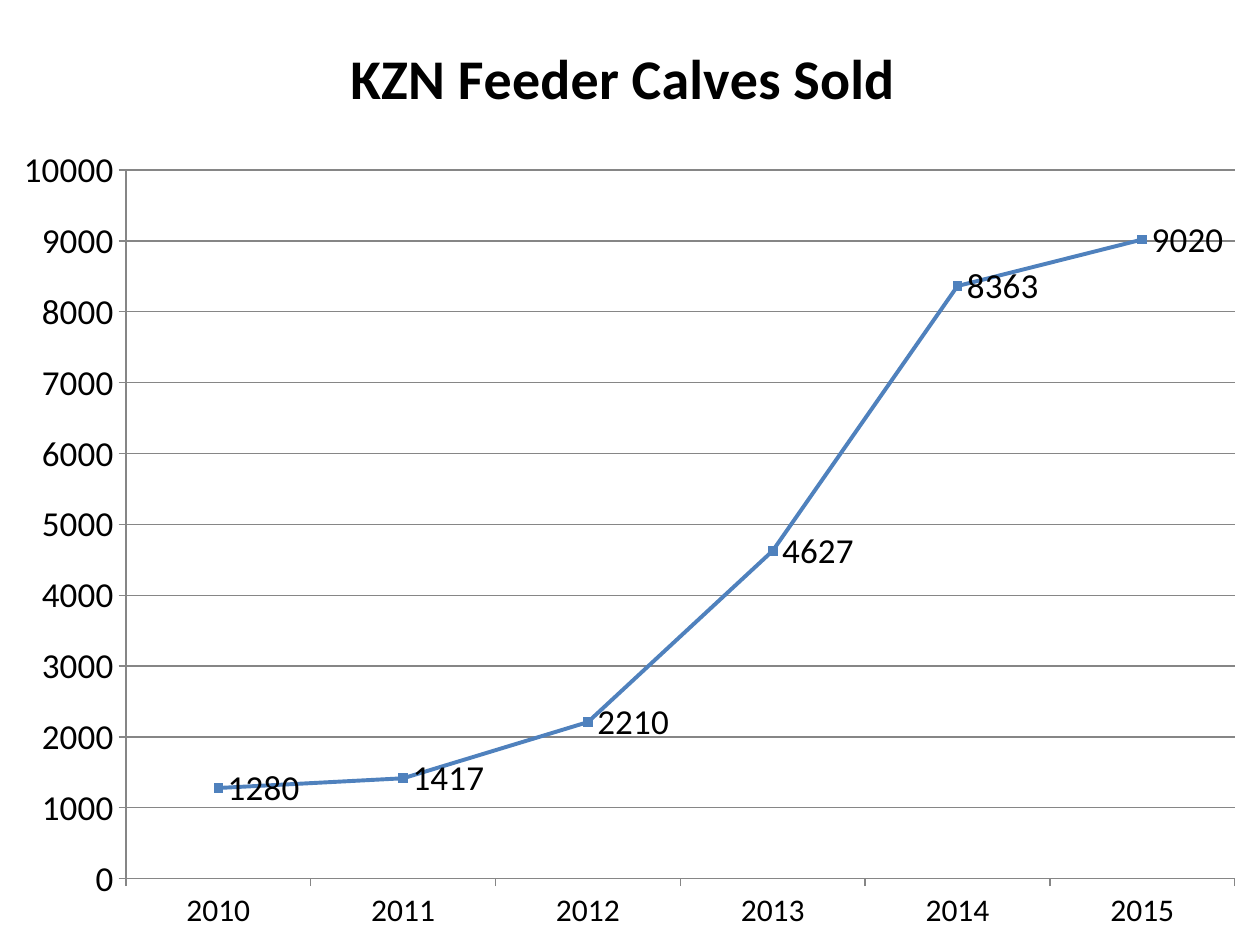
"""Build a slide with a line chart of feeder calf sales."""
from lxml import etree
from pptx import Presentation
from pptx.chart.data import CategoryChartData
from pptx.dml.color import RGBColor
from pptx.enum.chart import XL_CHART_TYPE, XL_LABEL_POSITION, XL_MARKER_STYLE, XL_TICK_MARK
from pptx.oxml.ns import qn
from pptx.util import Cm, Pt

LINE_MARKERS = XL_CHART_TYPE.LINE_MARKERS
LABEL_RIGHT = XL_LABEL_POSITION.RIGHT
SQUARE = XL_MARKER_STYLE.SQUARE
TICK_OUTSIDE, TICK_NONE = XL_TICK_MARK.OUTSIDE, XL_TICK_MARK.NONE

BLACK = RGBColor(0x00, 0x00, 0x00)
GRAY = RGBColor(0x86, 0x86, 0x86)
BLUE = RGBColor(0x4F, 0x81, 0xBD)
FONT_NAME = "Calibri"
BLANK_LAYOUT = 6
CALVES_SOLD = {"2010": 1280, "2011": 1417, "2012": 2210,
               "2013": 4627, "2014": 8363, "2015": 9020}


def format_font(font, size, bold=False, color=BLACK):
    """Set the typeface, size, weight and colour of a font."""
    font.name = FONT_NAME
    font.size = Pt(size)
    font.bold = bold
    font.color.rgb = color


def write_text(frame, text, **font_format):
    """Put one formatted span of text in a text frame."""
    span = frame.paragraphs[0].add_run()
    span.text = text
    format_font(span.font, **font_format)


def place_part(part, index, **fractions):
    """Fix a chart part at fractions of the chart's size."""
    layout = part.find(qn("c:layout"))
    if layout is None:
        layout = etree.Element(qn("c:layout"))
        part.insert(index, layout)
    manual = etree.SubElement(layout, qn("c:manualLayout"))
    settings = {"xMode": "edge", "yMode": "edge", **fractions}
    if "w" in fractions:
        settings = {"layoutTarget": "inner", **settings}
    for name, value in settings.items():
        etree.SubElement(manual, qn(f"c:{name}")).set("val", str(value))


def format_axis(axis, size):
    """Style the line, ticks and labels of an axis."""
    axis.major_tick_mark = TICK_OUTSIDE
    axis.minor_tick_mark = TICK_NONE
    axis.format.line.color.rgb = GRAY
    axis.format.line.width = Pt(0.75)
    format_font(axis.tick_labels.font, size)


def format_series(series):
    """Style the line, markers and value labels of a series."""
    series.smooth = False
    series.format.line.color.rgb = BLUE
    series.format.line.width = Pt(2.25)
    series.marker.style = SQUARE
    series.marker.size = 5
    series.marker.format.fill.solid()
    series.marker.format.fill.fore_color.rgb = BLUE
    series.marker.format.line.color.rgb = BLUE
    labels = series.data_labels
    labels.show_value = True
    labels.position = LABEL_RIGHT
    format_font(labels.font, 20)


def add_sales_chart(page, width, height):
    """Add the line chart over the whole page."""
    data = CategoryChartData()
    data.categories = list(CALVES_SOLD)
    data.add_series("Series 1", list(CALVES_SOLD.values()))
    chart = page.shapes.add_chart(LINE_MARKERS, 0, 0, width, height, data).chart
    format_font(chart.font, 10)
    chart.has_legend = False
    chart.has_title = True
    write_text(chart.chart_title.text_frame, "KZN Feeder Calves Sold", size=32, bold=True)
    chart.chart_title.include_in_layout = False
    place_part(chart.chart_title._element, 1, x=0.27, y=0.03)
    place_part(chart._chartSpace.chart.plotArea, 0, x=0.1, y=0.18, w=0.88, h=0.75)
    format_axis(chart.category_axis, 18)
    values = chart.value_axis
    format_axis(values, 20)
    values.minimum_scale, values.maximum_scale, values.major_unit = 0, 10000, 1000
    values.has_major_gridlines = True
    values.major_gridlines.format.line.color.rgb = GRAY
    values.major_gridlines.format.line.width = Pt(0.75)
    chart.plots[0].vary_by_categories = False
    format_series(chart.plots[0].series[0])


def main():
    """Create the deck and save it."""
    deck = Presentation()
    deck.slide_width, deck.slide_height = Cm(25.4), Cm(19.05)
    page = deck.slides.add_slide(deck.slide_layouts[BLANK_LAYOUT])
    add_sales_chart(page, deck.slide_width, deck.slide_height)
    deck.save("out.pptx")


if __name__ == "__main__":
    main()
